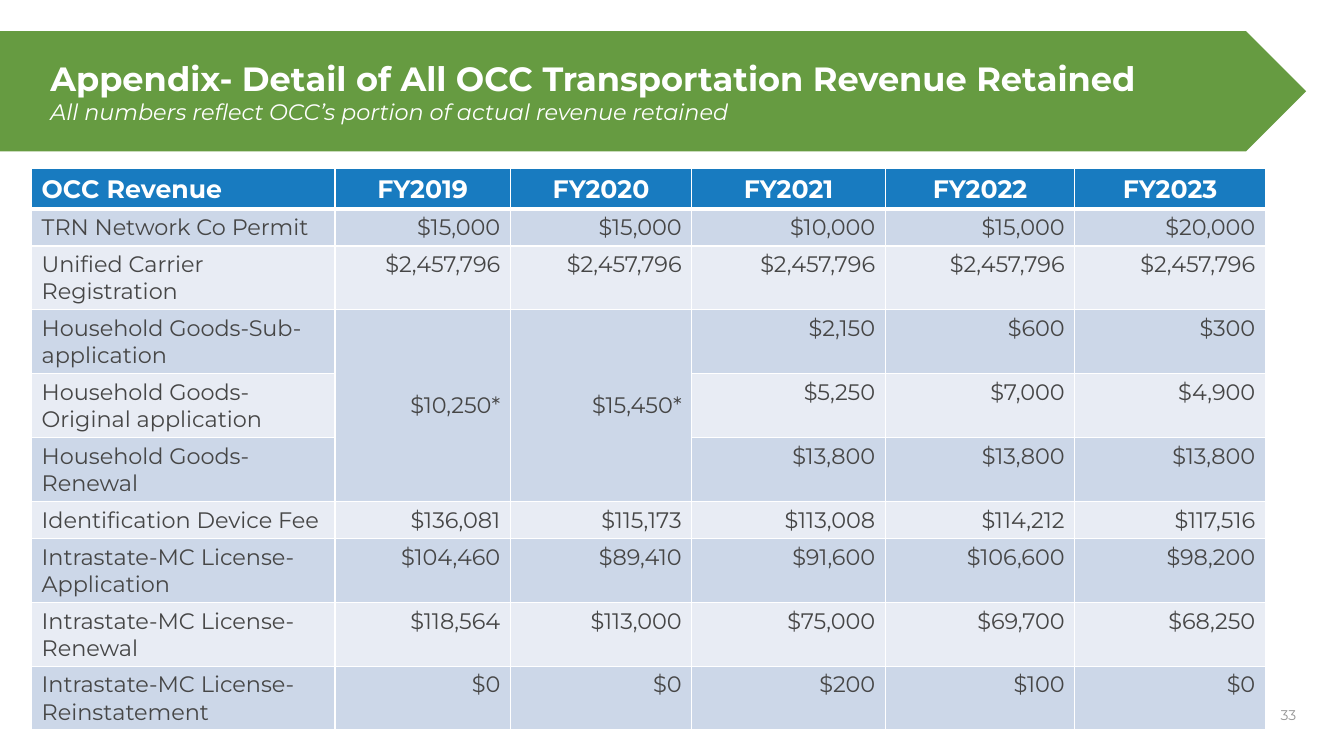
from pptx import Presentation
from pptx.dml.color import RGBColor as RGB
from pptx.enum.shapes import MSO_SHAPE as Shape
from pptx.enum.text import MSO_ANCHOR as Anchor, MSO_AUTO_SIZE as Fit, PP_ALIGN as Align
from pptx.oxml import parse_xml
from pptx.oxml.ns import nsdecls
from pptx.util import Pt

THEME = {
    "green": "669B41", "blue": "187BC0", "bands": ("CCD7E8", "E8ECF4"),
    "white": "FFFFFF",
    "title": dict(size=24, bold=True, italic=False, color="FFFFFF"),
    "note": dict(size=16, bold=False, italic=True, color="FFFFFF"),
    "head": dict(size=18, bold=True, color="FFFFFF"),
    "body": dict(size=16, bold=False, color="464646"),
    "page": dict(size=10, color="949494"),
}


def write(par, text, style, align=Align.LEFT):
    par.alignment = align
    run = par.add_run()
    run.text = text
    run.font.name = "Montserrat"
    for key, val in THEME[style].items():
        if key == "color":
            run.font.color.rgb = RGB.from_string(val)
        else:
            setattr(run.font, key, Pt(val) if key == "size" else val)


def paint(cell, color, top, base):
    props = cell._tc.get_or_add_tcPr()
    for side, wide in zip("LRTB", (1, 1, top, base)):
        props.append(parse_xml(
            f'<a:ln{side} {nsdecls("a")} w="{Pt(wide)}"><a:solidFill>'
            f'<a:srgbClr val="{THEME["white"]}"/></a:solidFill></a:ln{side}>'))
    cell.fill.solid()
    cell.fill.fore_color.rgb = RGB.from_string(color)


deck = Presentation()
deck.slide_width, deck.slide_height = Pt(960), Pt(540)
slide = deck.slides.add_slide(deck.slide_layouts[5])
shapes = slide.shapes

# Banner, placed behind the title
banner = shapes.add_shape(Shape.PENTAGON, Pt(0), Pt(22.2), Pt(933), Pt(86))
banner.shadow.inherit = False
banner.fill.solid()
banner.fill.fore_color.rgb = RGB.from_string(THEME["green"])
banner.line.fill.background()
title = shapes.title
title._element.addprevious(banner._element)

# Title and subtitle
for key, val in dict(left=36, top=32.4, width=897, height=66.2).items():
    setattr(title, key, Pt(val))
frame = title.text_frame
for key, val in dict(margin_left=0, vertical_anchor=Anchor.MIDDLE,
                     word_wrap=True, auto_size=Fit.NONE).items():
    setattr(frame, key, val)
par = frame.paragraphs[0]
write(par, "Appendix- Detail of All OCC Transportation Revenue Retained", "title")
par.add_line_break()
write(par, "All numbers reflect OCC’s portion of actual revenue retained", "note")

# Page number
page = shapes.add_textbox(Pt(717), Pt(502.6), Pt(216), Pt(15.8)).text_frame
page.word_wrap = True
page.vertical_anchor = Anchor.MIDDLE
write(page.paragraphs[0], "33", "page", Align.RIGHT)

# Revenue table: None marks a cell covered by the merge above it
ROWS = [
    ("OCC Revenue", "FY2019", "FY2020", "FY2021", "FY2022", "FY2023"),
    ("TRN Network Co Permit", "$15,000", "$15,000", "$10,000", "$15,000", "$20,000"),
    ("Unified Carrier Registration",) + ("$2,457,796",) * 5,
    ("Household Goods-Sub-application", "$10,250*", "$15,450*", "$2,150", "$600", "$300"),
    ("Household Goods- Original application", None, None, "$5,250", "$7,000", "$4,900"),
    ("Household Goods- Renewal", None, None, "$13,800", "$13,800", "$13,800"),
    ("Identification Device Fee", "$136,081", "$115,173", "$113,008", "$114,212", "$117,516"),
    ("Intrastate-MC License-Application", "$104,460", "$89,410", "$91,600", "$106,600", "$98,200"),
    ("Intrastate-MC License-Renewal", "$118,564", "$113,000", "$75,000", "$69,700", "$68,250"),
    ("Intrastate-MC License- Reinstatement", "$0", "$0", "$200", "$100", "$0"),
]
WIDTHS = (216.7, 125.3, 129.6, 138.2, 135.4, 136.1)
HEAD, SHORT, TALL = 26.6, 24.5, 42.5
HEIGHTS = (HEAD, SHORT, TALL, TALL, TALL, TALL, SHORT, TALL, TALL, TALL)

table = shapes.add_table(len(ROWS), len(WIDTHS), Pt(22.6), Pt(120.5),
                         Pt(sum(WIDTHS)), Pt(sum(HEIGHTS))).table
table.horz_banding = False
for col, wide in zip(table.columns, WIDTHS):
    col.width = Pt(wide)
for row, high in zip(table.rows, HEIGHTS):
    row.height = Pt(high)

for r, row in enumerate(ROWS):
    for c, text in enumerate(row):
        cell = table.cell(r, c)
        band = 0 if text is None else (r - 1) % 2
        color = THEME["bands"][band] if r else THEME["blue"]
        paint(cell, color, 3 if r == 1 else 1, 1 if r else 3)
        if text is None:
            continue
        side = Align.RIGHT if r else Align.CENTER
        write(cell.text_frame.paragraphs[0], text, "body" if r else "head",
              side if c else Align.LEFT)

# Household goods totals span three rows
for c in (1, 2):
    total = table.cell(3, c)
    total.merge(table.cell(5, c))
    total.vertical_anchor = Anchor.MIDDLE

deck.save("out.pptx")
